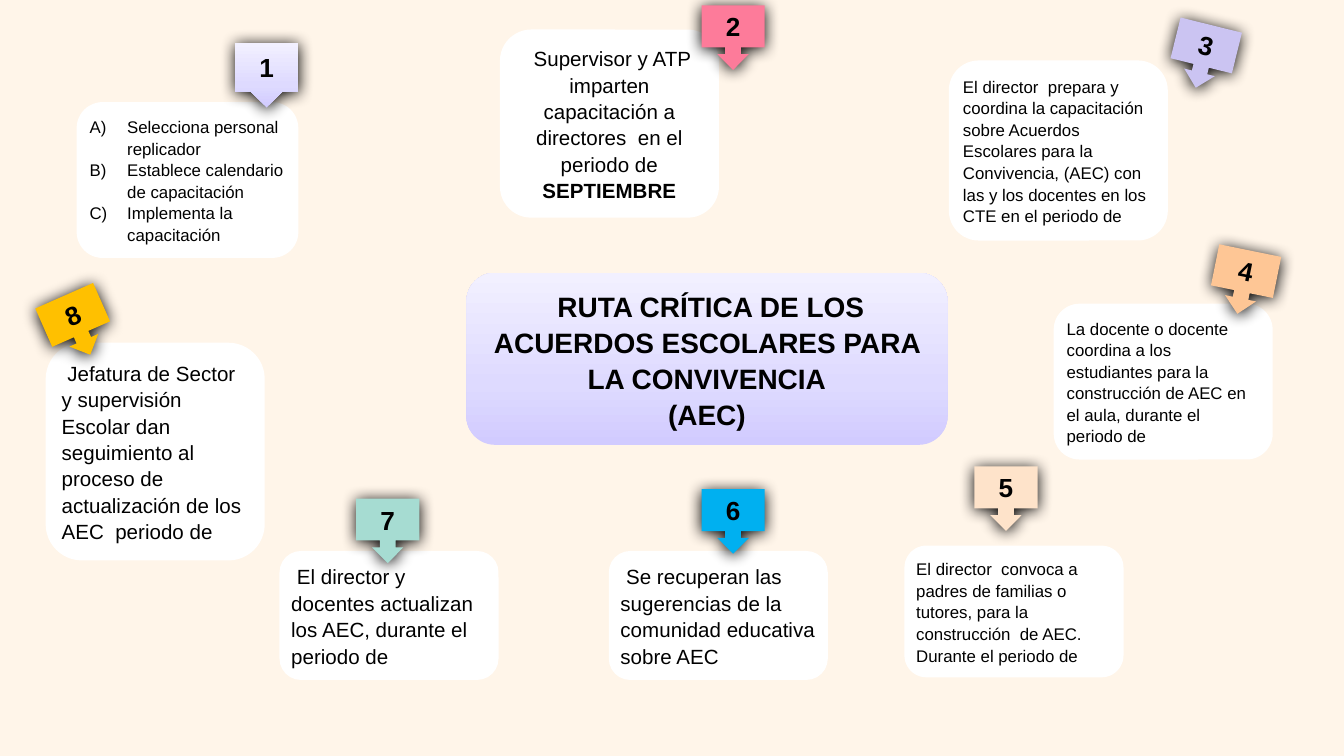
"""Builds the critical-route slide for the school coexistence agreements."""
from copy import deepcopy

from lxml import etree
from pptx import Presentation
from pptx.dml.color import RGBColor
from pptx.enum.shapes import MSO_SHAPE
from pptx.enum.text import MSO_ANCHOR, MSO_AUTO_SIZE, PP_ALIGN
from pptx.oxml.ns import qn
from pptx.util import Inches, Pt

ROUND, CALLOUT = MSO_SHAPE.ROUNDED_RECTANGLE, MSO_SHAPE.DOWN_ARROW_CALLOUT
LEFT, CENTER = PP_ALIGN.LEFT, PP_ALIGN.CENTER
MIDDLE = MSO_ANCHOR.MIDDLE
GROW = MSO_AUTO_SIZE.SHAPE_TO_FIT_TEXT

THEME = {
    "font": "Arial", "text": "000000", "background": "FFF5E9", "card": "FFFFFF",
    "lilac": [(0, "D1CBFF"), (0.35, "DEDAFF"), (1, "F2F0FF")],
    "small": 9, "body": 11, "badge": 14, "title": 15, "spacing": 1.07,
}
SMALL, BODY = THEME["small"], THEME["body"]
SLIDE_W = 10
SLIDE_H = SLIDE_W * 9 / 16
CARD_W, BADGE_W, BADGE_H = 1.63, 0.47, 0.48

TITLE = [" RUTA CRÍTICA DE LOS ACUERDOS ESCOLARES PARA LA CONVIVENCIA", "(AEC)"]
TITLE_BOX = (3.47, 2.03, 3.58, 1.28)

CARDS = [
    ((0.57, 0.76, 1.65, 1.16),
     ["Selecciona personal replicador", "Establece calendario de capacitación",
      "Implementa la capacitación"], {"size": SMALL, "lettered": True}),
    ((3.72, 0.22, CARD_W, 1.4),
     [" Supervisor y ATP imparten capacitación a directores  en el periodo de",
      "SEPTIEMBRE"], {"size": BODY, "align": CENTER, "bold": (False, True)}),
    ((7.06, 0.45, CARD_W, 1.34),
     ["El director  prepara y coordina la capacitación sobre Acuerdos Escolares "
      "para la Convivencia, (AEC) con las y los docentes en los CTE en el periodo de"],
     {"size": SMALL}),
    ((7.84, 2.26, CARD_W, 1.16),
     ["La docente o docente coordina a los estudiantes para la construcción de AEC "
      "en el aula, durante el periodo de"], {"size": SMALL}),
    ((6.73, 4.06, CARD_W, 0.98),
     ["El director  convoca a padres de familias o tutores, para la construcción  "
      "de AEC. Durante el periodo de"], {"size": SMALL}),
    ((4.53, 4.1, CARD_W, 0.96),
     [" Se recuperan las sugerencias de la comunidad educativa sobre AEC"],
     {"size": BODY}),
    ((2.08, 4.1, CARD_W, 0.96),
     [" El director y docentes actualizan los AEC, durante el periodo de"],
     {"size": BODY}),
    ((0.34, 2.55, CARD_W, 1.62),
     [" Jefatura de Sector y supervisión Escolar dan seguimiento al proceso de "
      "actualización de los AEC  periodo de"], {"size": BODY}),
]

BADGES = [
    (1.75, 0.32, 0, THEME["lilac"]), (5.22, 0.04, 0, "FD7B9A"),
    (8.72, 0.18, 13.9, "CBC4F2"), (9.02, 1.86, 11.5, "FEC695"),
    (7.25, 3.47, 0, "FEE3CA"), (5.22, 3.64, 0, "00B0F0"),
    (2.65, 3.71, 0, "A6DCD2"), (0.34, 2.18, 336.2, "FFC000"),
]


def rgb(value):
    return RGBColor.from_string(value)


def paint(sp, color):
    if isinstance(color, str):
        sp.fill.solid()
        sp.fill.fore_color.rgb = rgb(color)
        return
    sp.fill.gradient()
    sp.fill.gradient_angle = 90
    stops = sp._element.spPr.find(".//" + qn("a:gsLst"))
    stops.insert(1, deepcopy(stops[0]))
    for stop, (position, value) in zip(sp.fill.gradient_stops, color):
        stop.position = position
        stop.color.rgb = rgb(value)


def add_box(s, kind, box, color):
    sp = s.shapes.add_shape(kind, *(Inches(v) for v in box))
    paint(sp, color)
    sp.line.fill.background()
    sp.shadow.inherit = False
    return sp


def add_shadow(sp):
    effects = sp._element.spPr.find(qn("a:effectLst"))
    shadow = etree.SubElement(effects, qn("a:outerShdw"), blurRad=str(Pt(8.5)),
                              dist=str(Pt(1)), dir="5400000", rotWithShape="0")
    etree.SubElement(shadow, qn("a:srgbClr"), val=THEME["text"])


def letter(p):
    pPr = p._p.get_or_add_pPr()
    pPr.set("marL", str(Inches(0.28)))
    pPr.set("indent", str(Inches(-0.28)))
    bullet_color = etree.SubElement(pPr, qn("a:buClr"))
    etree.SubElement(bullet_color, qn("a:srgbClr"), val=THEME["text"])
    etree.SubElement(pPr, qn("a:buAutoNum"), type="alphaUcParenR")


def write(sp, lines, size, align=LEFT, bold=(False,), spacing=THEME["spacing"],
          side=0.04, grow=True, lettered=False):
    tf = sp.text_frame
    tf.word_wrap = True
    tf.vertical_anchor = MIDDLE
    tf.margin_left = tf.margin_right = Inches(side)
    tf.margin_top = tf.margin_bottom = Inches(0.04)
    if grow:
        tf.auto_size = GROW
    for i, line in enumerate(lines):
        p = tf.add_paragraph() if i else tf.paragraphs[0]
        p.alignment = align
        p.line_spacing = spacing
        if lettered:
            letter(p)
        r = p.add_run()
        r.text = line
        r.font.name = THEME["font"]
        r.font.size = Pt(size)
        r.font.bold = bold[i % len(bold)]
        r.font.color.rgb = rgb(THEME["text"])


def main():
    prs = Presentation()
    prs.slide_width, prs.slide_height = Inches(SLIDE_W), Inches(SLIDE_H)
    s = prs.slides.add_slide(prs.slide_layouts[6])
    s.background.fill.solid()
    s.background.fill.fore_color.rgb = rgb(THEME["background"])

    for box, lines, style in CARDS:
        write(add_box(s, ROUND, box, THEME["card"]), lines, **style)

    sp = add_box(s, ROUND, TITLE_BOX, THEME["lilac"])
    write(sp, TITLE, size=THEME["title"], align=CENTER, bold=(True,))

    for number, (x, y, rotation, color) in enumerate(BADGES, 1):
        sp = add_box(s, CALLOUT, (x, y, BADGE_W, BADGE_H), color)
        sp.rotation = rotation
        if number == 1:
            sp.adjustments[3] = 0.76
        add_shadow(sp)
        write(sp, [str(number)], size=THEME["badge"], align=CENTER, bold=(True,),
              spacing=1.0, side=0.07, grow=False)

    prs.save("out.pptx")


if __name__ == "__main__":
    main()
